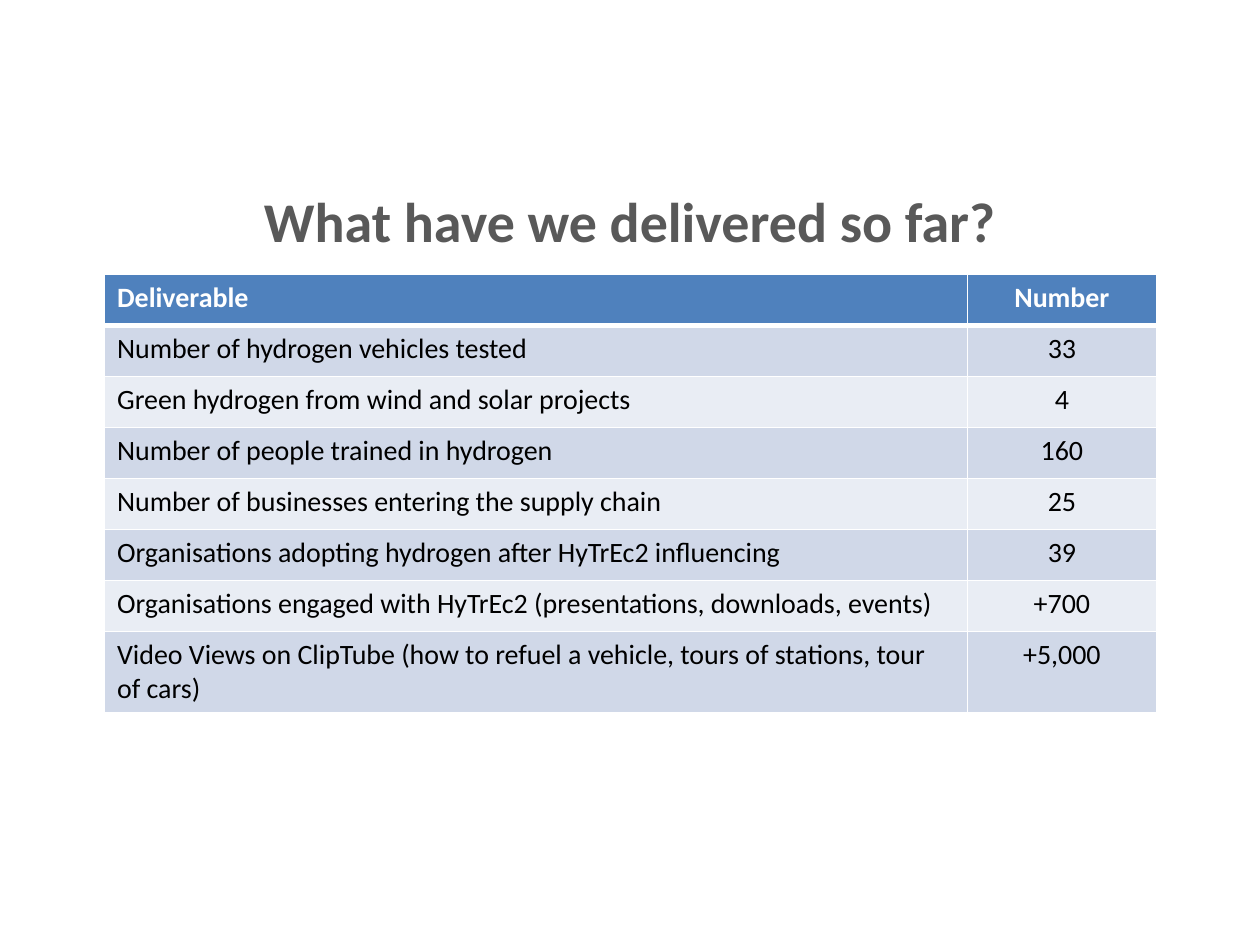
from dataclasses import dataclass

from lxml import etree
from pptx import Presentation, util as u
from pptx.dml.color import RGBColor
from pptx.enum import text
from pptx.oxml.ns import qn


@dataclass(frozen=True)
class Theme:
    font: str = "Calibri"
    title_size: int = 32
    table_size: int = 16
    title: str = "595959"
    header: str = "4F81BD"
    bands: tuple = ("D0D8E8", "E9EDF4")
    light: str = "FFFFFF"
    dark: str = "000000"
    rule: int = 1
    header_rule: int = 3


THEME = Theme()
TITLE = "What have we delivered so far?"
DELIVERABLES = [
    ("Deliverable", "Number"),
    ("Number of hydrogen vehicles tested", "33"),
    ("Green hydrogen from wind and solar projects", "4"),
    ("Number of people trained in hydrogen", "160"),
    ("Number of businesses entering the supply chain", "25"),
    ("Organisations adopting hydrogen after HyTrEc2 influencing", "39"),
    ("Organisations engaged with HyTrEc2 (presentations, downloads, events)", "+700"),
    ("Video Views on ClipTube (how to refuel a vehicle, tours of stations, tour of cars)", "+5,000"),
]


def style_paragraph(para, size, color, bold, align):
    para.alignment = align
    for span in para.runs:
        span.font.name = THEME.font
        span.font.size = u.Pt(size)
        span.font.bold = bold
        span.font.color.rgb = RGBColor.from_string(color)


def add_borders(cell, widths):
    properties = cell._tc.get_or_add_tcPr()
    for side, width in widths.items():
        line = etree.SubElement(properties, qn(f"a:ln{side}"), w=str(u.Pt(width)))
        fill = etree.SubElement(line, qn("a:solidFill"))
        etree.SubElement(fill, qn("a:srgbClr"), val=THEME.light)


def place_title(page, box):
    title = page.shapes.title
    title.left, title.top, title.width, title.height = box
    frame = title.text_frame
    frame.text = TITLE
    frame.word_wrap = True
    frame.vertical_anchor = text.MSO_ANCHOR.TOP
    style_paragraph(frame.paragraphs[0], THEME.title_size, THEME.title, True, text.PP_ALIGN.CENTER)


def place_table(page, box):
    left, top, width, height = box
    table = page.shapes.add_table(len(DELIVERABLES), 2, left, top, width, height).table
    table.columns[0].width = int(width * 0.82)
    table.columns[1].width = width - table.columns[0].width
    single_row = u.Inches(3.24) // len(DELIVERABLES)
    for row in table.rows:
        row.height = single_row
    table.rows[len(DELIVERABLES) - 1].height = height - single_row * (len(DELIVERABLES) - 1)

    for row_index, values in enumerate(DELIVERABLES):
        is_header = row_index == 0
        fill = THEME.header if is_header else THEME.bands[(row_index - 1) % 2]
        color = THEME.light if is_header else THEME.dark
        widths = {
            "L": THEME.rule,
            "R": THEME.rule,
            "T": THEME.header_rule if row_index == 1 else THEME.rule,
            "B": THEME.header_rule if is_header else THEME.rule,
        }
        for column, value in enumerate(values):
            cell = table.cell(row_index, column)
            cell.text = value
            add_borders(cell, widths)
            cell.fill.solid()
            cell.fill.fore_color.rgb = RGBColor.from_string(fill)
            align = text.PP_ALIGN.CENTER if column else text.PP_ALIGN.LEFT
            style_paragraph(cell.text_frame.paragraphs[0], THEME.table_size, color, is_header, align)


def main():
    deck = Presentation()
    deck.slide_width, deck.slide_height = u.Inches(10), u.Inches(7.5)
    page = deck.slides.add_slide(deck.slide_layouts[5])
    place_title(page, [u.Inches(n) for n in (0.5, 1.43, 9, 5.27)])
    place_table(page, [u.Inches(n) for n in (0.83, 2.18, 8.35, 3.47)])
    deck.save("out.pptx")


if __name__ == "__main__":
    main()
